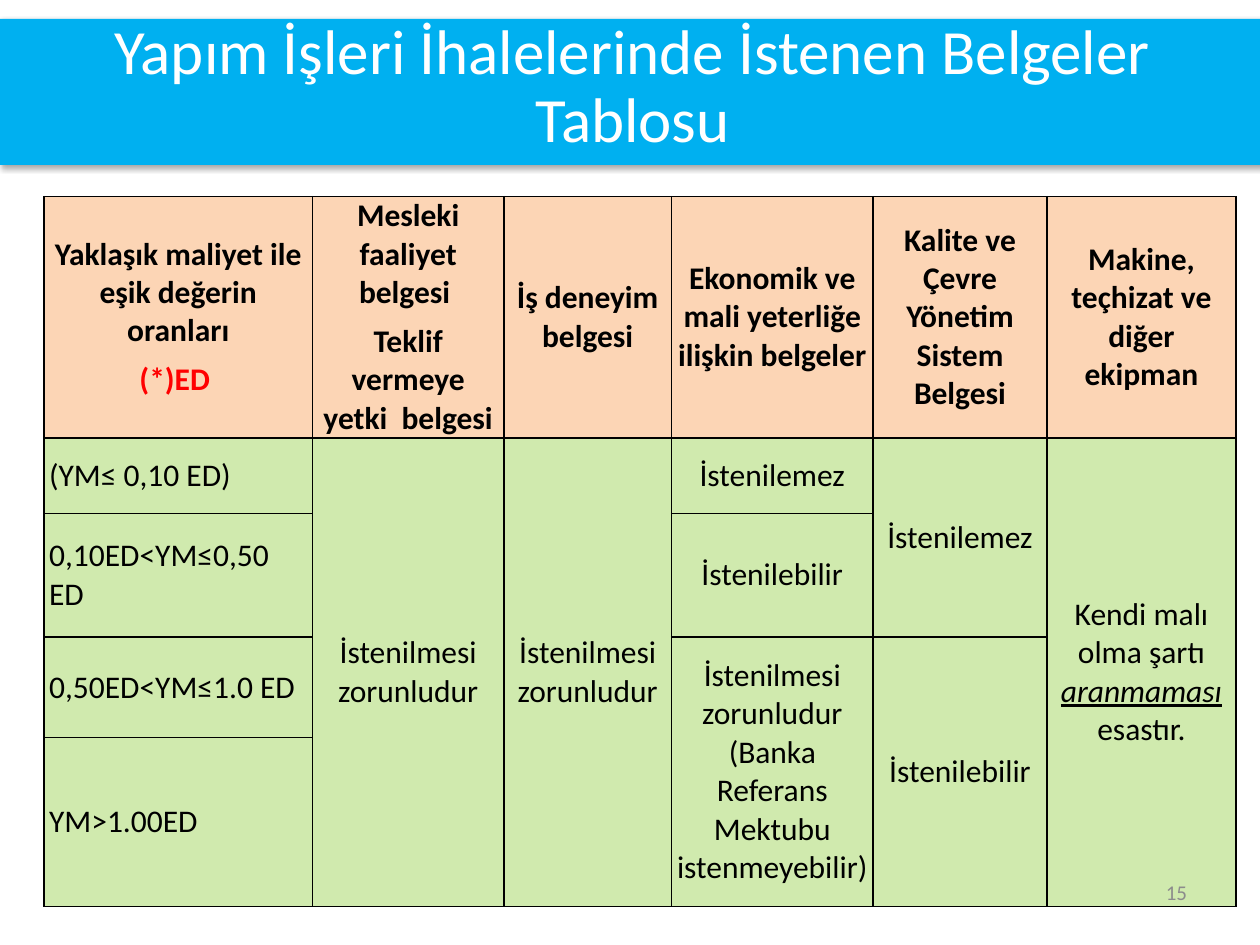
from lxml import etree
from pptx import Presentation
from pptx.dml.color import RGBColor
from pptx.enum import shapes, text
from pptx.oxml import parse_xml
from pptx.oxml.ns import nsdecls, qn
from pptx.util import Inches, Pt

HUES = {"bar": "00B0F0", "head": "FCD5B5", "body": "ABDA6C", "ink": "000000",
        "red": "FF0000", "white": "FFFFFF", "gray": "8C8C8C"}
FONT = "Calibri"
TITLE = "Yapım İşleri İhalelerinde İstenen Belgeler Tablosu"
PAGE = "15"
COLS = [2.13, 1.52, 1.33, 1.6, 1.38, 1.5]
ROWS = [1.91, 0.6, 0.98, 0.8, 1.34]

# Each cell is a list of paragraphs, each paragraph a list of (words, style).
HEADS = [
    [[("Yaklaşık maliyet ile eşik değerin oranları", {})],
     [("(*)ED ", {"hue": "red"})]],
    [[("Mesleki faaliyet belgesi ", {})],
     [("Teklif vermeye yetki  belgesi", {})]],
    [[("İş deneyim belgesi", {})]],
    [[("Ekonomik ve mali yeterliğe ilişkin belgeler", {})]],
    [[("Kalite ve Çevre Yönetim Sistem Belgesi", {})]],
    [[("Makine, teçhizat ve diğer ekipman", {})]],
]
RATIOS = ["(YM≤ 0,10 ED)", "0,10ED<YM≤0,50 ED", "0,50ED<YM≤1.0 ED", "YM>1.00ED  "]
# (row, column, rows spanned, runs)
RULES = [
    (1, 1, 4, [("İstenilmesi zorunludur", {})]),
    (1, 2, 4, [("İstenilmesi zorunludur", {})]),
    (1, 3, 1, [("İstenilemez", {})]),
    (2, 3, 1, [("İstenilebilir", {})]),
    (3, 3, 2, [("İstenilmesi zorunludur (Banka Referans Mektubu istenmeyebilir)", {})]),
    (1, 4, 2, [("İstenilemez", {})]),
    (3, 4, 2, [("İstenilebilir", {})]),
    (1, 5, 4, [("Kendi malı olma şartı ", {}),
               ("aranmaması", {"italic": True, "underline": True}),
               (" esastır.", {})]),
]


def rgb(hue):
    return RGBColor.from_string(HUES[hue])


def add_run(para, words, size, hue="ink", bold=False, italic=False, underline=False):
    run = para.add_run()
    run.text = words
    font = run.font
    font.name, font.size, font.bold = FONT, Pt(size), bold
    font.italic, font.underline = italic, underline
    font.color.rgb = rgb(hue)


def style(cell, hue, alpha=None):
    """Set fill, margins and black borders."""
    cell.fill.solid()
    cell.fill.fore_color.rgb = rgb(hue)
    cell.vertical_anchor = text.MSO_ANCHOR.MIDDLE
    cell.margin_left = cell.margin_right = Inches(0.04)
    cell.margin_top = cell.margin_bottom = 0
    props = cell._tc.get_or_add_tcPr()
    if alpha:
        tint = props.find(".//" + qn("a:srgbClr"))
        etree.SubElement(tint, qn("a:alpha")).set("val", str(alpha * 1000))
    for i, side in enumerate("LRTB"):
        props.insert(i, parse_xml(
            f'<a:ln{side} {nsdecls("a")} w="{Pt(1)}"><a:solidFill>'
            f'<a:srgbClr val="{HUES["ink"]}"/></a:solidFill></a:ln{side}>'))


def write(cell, paras, align=text.PP_ALIGN.CENTER, bold=False):
    frame = cell.text_frame
    for i, runs in enumerate(paras):
        para = frame.add_paragraph() if i else frame.paragraphs[0]
        para.alignment, para.space_after = align, Pt(6)
        for words, look in runs:
            add_run(para, words, 18, bold=bold, **look)


def add_grid(slide):
    frame = slide.shapes.add_table(
        len(ROWS), len(COLS), Inches(0.35), Inches(1.56),
        Inches(sum(COLS)), Inches(sum(ROWS)))
    grid = frame.table
    for col, wide in zip(grid.columns, COLS):
        col.width = Inches(wide)
    for row, high in zip(grid.rows, ROWS):
        row.height = Inches(high)
    for r in range(len(ROWS)):
        for c in range(len(COLS)):
            style(grid.cell(r, c), *(("body", 55) if r else ("head",)))
    for c, paras in enumerate(HEADS):
        write(grid.cell(0, c), paras, bold=True)
    for r, words in enumerate(RATIOS, 1):
        write(grid.cell(r, 0), [[(words, {})]], text.PP_ALIGN.JUSTIFY)
    for r, c, span, runs in RULES:
        cell = grid.cell(r, c)
        if span > 1:
            cell.merge(grid.cell(r + span - 1, c))
        write(cell, [runs])


def add_page(slide):
    box = slide.shapes.add_textbox(Inches(7.19), Inches(6.88), Inches(2.33), Inches(0.4))
    frame = box.text_frame
    frame.word_wrap = True
    frame.vertical_anchor = text.MSO_ANCHOR.MIDDLE
    para = frame.paragraphs[0]
    para.alignment = text.PP_ALIGN.RIGHT
    add_run(para, PAGE, 12, "gray")


def add_title(slide):
    bar = slide.shapes.add_shape(
        shapes.MSO_SHAPE.RECTANGLE, 0, Inches(0.15), Inches(10.04), Inches(1.16))
    bar.fill.solid()
    bar.fill.fore_color.rgb = rgb("bar")
    bar.line.fill.background()
    bar.shadow.inherit = False
    bar._element.spPr.find(qn("a:effectLst")).append(parse_xml(
        f'<a:outerShdw {nsdecls("a")} blurRad="{Pt(3.1)}" dist="{Pt(1.8)}" '
        f'dir="5400000" rotWithShape="0"><a:srgbClr val="{HUES["ink"]}">'
        '<a:alpha val="35000"/></a:srgbClr></a:outerShdw>'))
    frame = bar.text_frame
    frame.word_wrap = True
    frame.vertical_anchor = text.MSO_ANCHOR.MIDDLE
    frame.margin_top, frame.margin_bottom = 0, Inches(0.06)
    para = frame.paragraphs[0]
    para.alignment, para.line_spacing = text.PP_ALIGN.CENTER, 0.9
    add_run(para, TITLE, 36, "white")


def main():
    deck = Presentation()
    deck.slide_width, deck.slide_height = Inches(10), Inches(7.5)
    slide = deck.slides.add_slide(deck.slide_layouts[6])
    add_grid(slide)
    add_page(slide)
    add_title(slide)
    deck.save("out.pptx")


if __name__ == "__main__":
    main()
